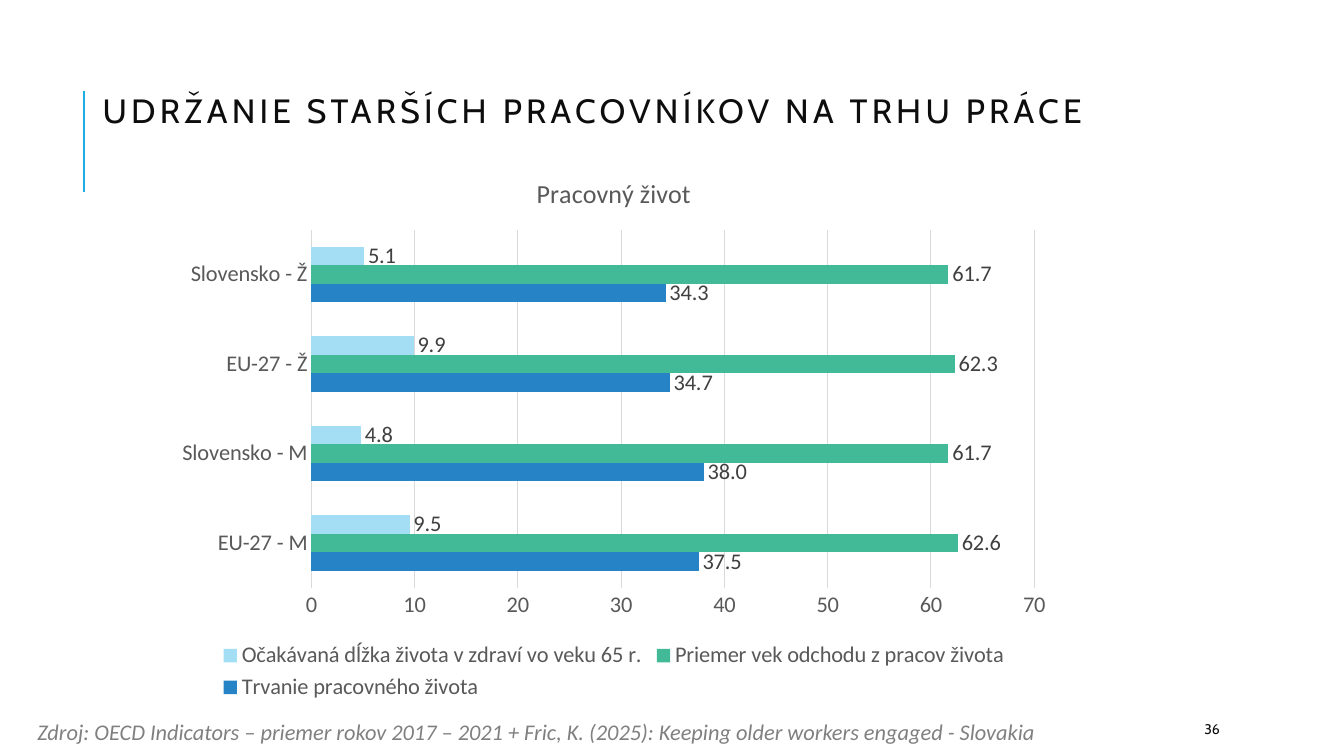
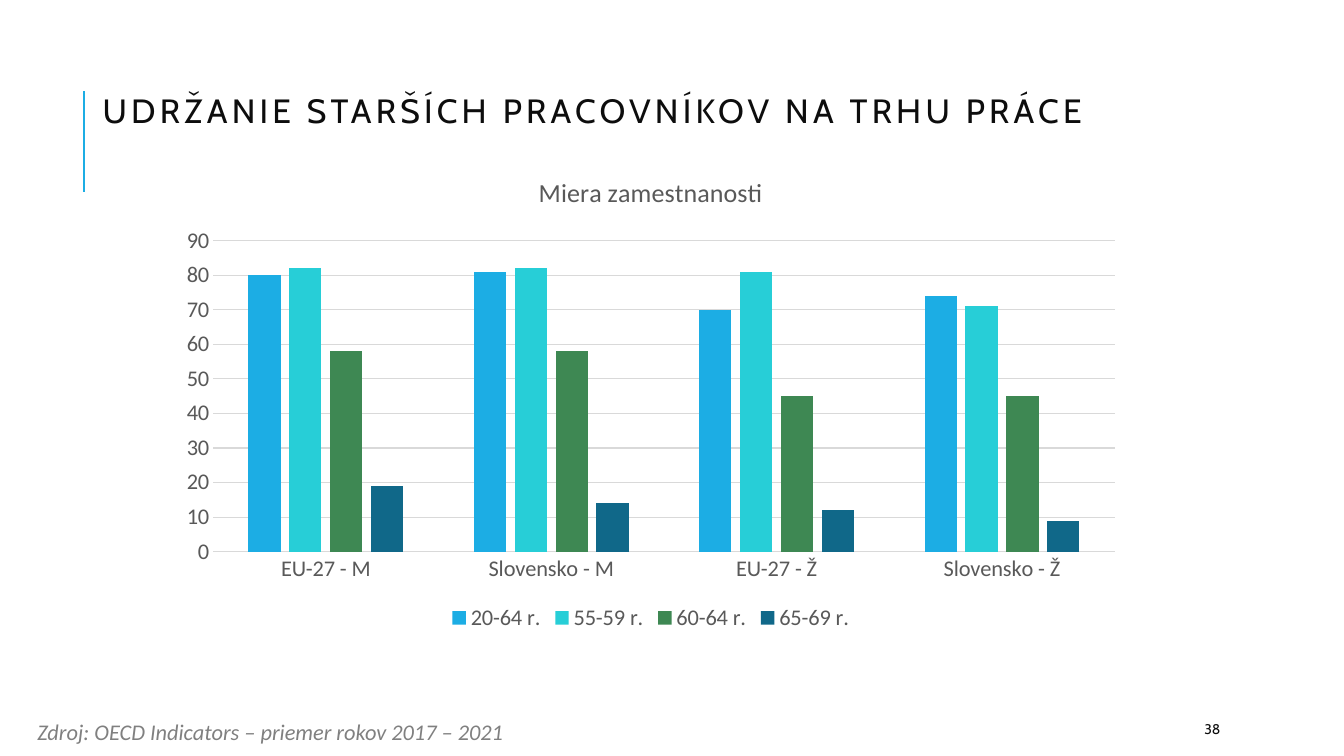
from lxml import etree
from pptx import Presentation
from pptx import util as u
from pptx.chart.data import CategoryChartData
from pptx.dml.color import RGBColor
from pptx.enum import chart as charts, shapes, text
from pptx.oxml.ns import qn

# Shared style
BLACK = RGBColor(0x0D, 0x0D, 0x0D)
SOURCE_GREY = RGBColor(0x80, 0x80, 0x80)
AXIS_GREY = RGBColor(0x59, 0x59, 0x59)
LABEL_GREY = RGBColor(0x40, 0x40, 0x40)
GRID_GREY = RGBColor(0xD9, 0xD9, 0xD9)
SKY = RGBColor(0x1C, 0xAD, 0xE4)
TURQUOISE = RGBColor(0x27, 0xCE, 0xD7)
GREEN = RGBColor(0x3E, 0x88, 0x53)
PETROL = RGBColor(0x10, 0x68, 0x89)
BLUE = RGBColor(0x26, 0x83, 0xC6)
MINT = RGBColor(0x42, 0xBA, 0x97)
PALE_BLUE = RGBColor(0xA4, 0xDE, 0xF4)
HEAD_FONT, BODY_FONT = "Cabin", "Calibri"

TITLE = "UDRŽANIE STARŠÍCH PRACOVNÍKOV NA TRHU PRÁCE"
SOURCE = "Zdroj: OECD Indicators – priemer rokov 2017 – 2021"
GROUPS = ["EU-27 - M", "Slovensko - M", "EU-27 - Ž", "Slovensko - Ž"]


def set_font(font, size, color, name=BODY_FONT, italic=False):
    font.size, font.name = u.Pt(size), name
    font.bold, font.italic = False, italic
    font.color.rgb = color


def add_text(page, content, left, top, width, height, *, size, color, font=BODY_FONT,
             italic=False, spacing=None, line_spacing=None, anchor=text.MSO_ANCHOR.TOP):
    box = page.shapes.add_textbox(u.Cm(left), u.Cm(top), u.Cm(width), u.Cm(height))
    frame = box.text_frame
    frame.word_wrap = True
    frame.vertical_anchor = anchor
    para = frame.paragraphs[0]
    if line_spacing:
        para.line_spacing = line_spacing
    span = para.add_run()
    span.text = content
    set_font(span.font, size, color, font, italic)
    if spacing:
        span.font._element.set("spc", str(spacing * 100))


def add_page(deck, number, source):
    """Add a page with the shared accent line, title, source and number."""
    page = deck.slides.add_slide(deck.slide_layouts[6])
    accent = page.shapes.add_connector(
        shapes.MSO_CONNECTOR.STRAIGHT, u.Cm(2.12), u.Cm(4.83), u.Cm(2.12), u.Cm(2.29))
    accent.line.color.rgb = SKY
    accent.line.width = u.Pt(1.5)
    etree.SubElement(accent._element.spPr, qn("a:effectLst"))
    add_text(page, TITLE, 2.34, 2.34, 29.1, 1.55, size=24, color=BLACK,
             font=HEAD_FONT, spacing=3, line_spacing=0.8)
    add_text(page, source, 0.69, 17.98, 28, 0.94, size=16, color=SOURCE_GREY, italic=True)
    add_text(page, str(number), 30.1, 17.98, 2.69, 0.76, size=10, color=BLACK,
             font=HEAD_FONT, anchor=text.MSO_ANCHOR.MIDDLE)
    return page


def style_axes(chart, maximum):
    category, value = chart.category_axis, chart.value_axis
    for axis in (category, value):
        axis.major_tick_mark = axis.minor_tick_mark = charts.XL_TICK_MARK.NONE
        set_font(axis.tick_labels.font, 16, AXIS_GREY)
    value.minimum_scale, value.maximum_scale, value.major_unit = 0, maximum, 10
    value.has_major_gridlines = True
    value.format.line.fill.background()
    value.tick_labels.number_format = "0"
    value.tick_labels.number_format_is_linked = False
    for line in (category.format.line, value.major_gridlines.format.line):
        line.color.rgb = GRID_GREY
        line.width = u.Pt(0.75)


def add_bars(page, kind, title, series, left, top, width, height, *,
             maximum, gap, overlap=0, labels=False):
    """Add a clustered chart; series holds (name, color, values) rows."""
    data = CategoryChartData(number_format="0.0" if labels else "0")
    data.categories = GROUPS
    for name, _, values in series:
        data.add_series(name, values)
    chart = page.shapes.add_chart(
        kind, u.Cm(left), u.Cm(top), u.Cm(width), u.Cm(height), data).chart
    set_font(chart.font, 16, AXIS_GREY)

    # Title and legend
    chart.has_title = True
    frame = chart.chart_title.text_frame
    frame.text = title
    set_font(frame.paragraphs[0].runs[0].font, 18.6, AXIS_GREY)
    chart.chart_title.include_in_layout = False
    chart.has_legend = True
    chart.legend.position = charts.XL_LEGEND_POSITION.BOTTOM
    chart.legend.include_in_layout = False
    set_font(chart.legend.font, 16, AXIS_GREY)

    # Axes and bars
    style_axes(chart, maximum)
    plot = chart.plots[0]
    plot.vary_by_categories = False
    plot.gap_width, plot.overlap = gap, overlap
    for bars, (_, color, _) in zip(plot.series, series):
        bars.format.fill.solid()
        bars.format.fill.fore_color.rgb = color
        bars.invert_if_negative = False
    if labels:
        plot.has_data_labels = True
        marks = plot.data_labels
        marks.show_value = True
        marks.position = charts.XL_LABEL_POSITION.OUTSIDE_END
        marks.number_format, marks.number_format_is_linked = "0.0", False
        set_font(marks.font, 16, LABEL_GREY)


def main():
    deck = Presentation()
    deck.slide_width, deck.slide_height = u.Cm(33.87), u.Cm(19.05)

    # Working life
    page = add_page(deck, 36, SOURCE + " + Fric, K. (2025): Keeping older workers engaged - Slovakia")
    add_bars(page, charts.XL_CHART_TYPE.BAR_CLUSTERED, "Pracovný život", [
        ("Trvanie pracovného života", BLUE, (37.5, 38, 34.7, 34.3)),
        ("Priemer vek odchodu z pracov života", MINT, (62.6, 61.7, 62.3, 61.7)),
        ("Očakávaná dĺžka života v zdraví vo veku 65 r.", PALE_BLUE, (9.5, 4.8, 9.9, 5.1)),
    ], 4.14, 3.89, 22.66, 13.89, maximum=70, gap=182, labels=True)

    # Employment rate
    page = add_page(deck, 38, SOURCE)
    add_bars(page, charts.XL_CHART_TYPE.COLUMN_CLUSTERED, "Miera zamestnanosti", [
        ("20-64 r.", SKY, (80, 81, 70, 74)),
        ("55-59 r.", TURQUOISE, (82, 82, 81, 71)),
        ("60-64 r.", GREEN, (58, 58, 45, 45)),
        ("65-69 r.", PETROL, (19, 14, 12, 9)),
    ], 4.22, 3.89, 24.36, 12.14, maximum=90, gap=219, overlap=-27)

    deck.save("out.pptx")


if __name__ == "__main__":
    main()
